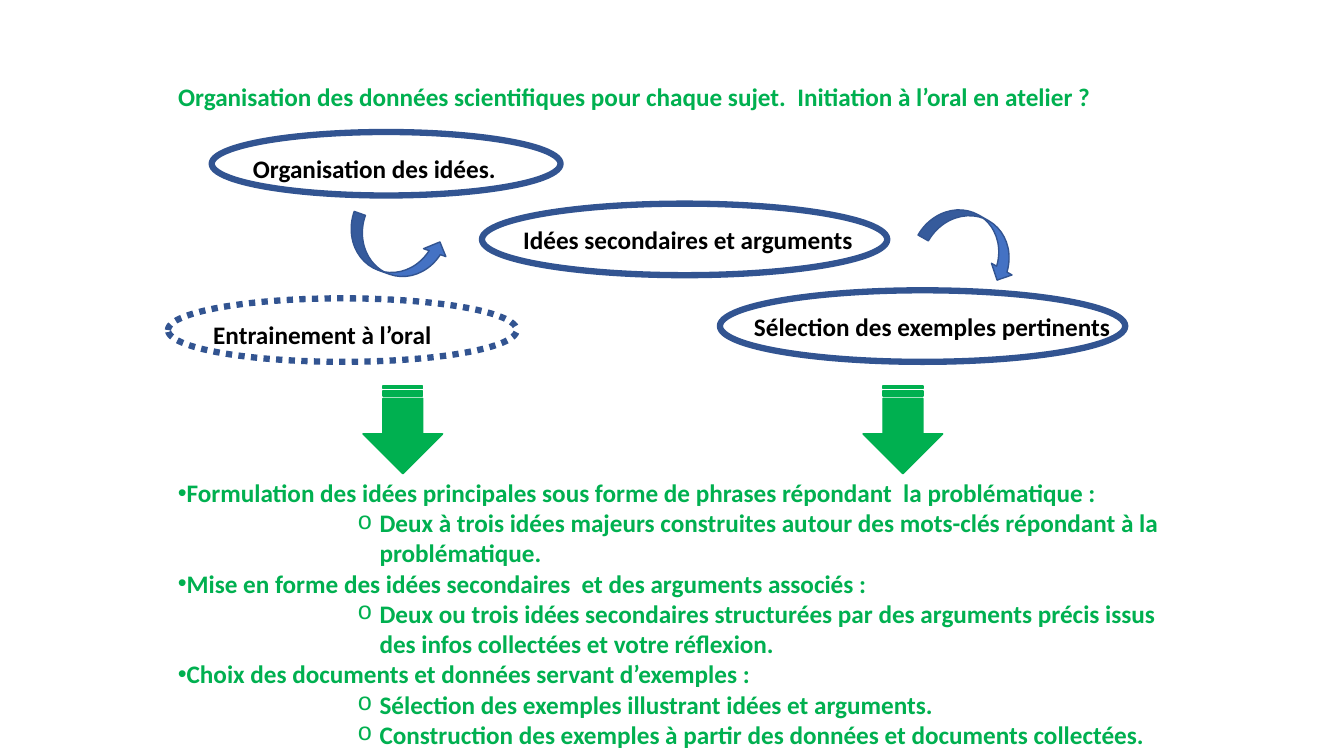
from dataclasses import dataclass

from lxml import etree
from pptx import Presentation
from pptx import util as u
from pptx.dml.color import RGBColor
from pptx.enum import dml, shapes, text
from pptx.oxml.ns import qn


@dataclass(frozen=True)
class Theme:
    font: str = "Calibri"
    size: int = 18
    green: RGBColor = RGBColor(0x00, 0xB0, 0x50)
    black: RGBColor = RGBColor(0x00, 0x00, 0x00)
    blue: RGBColor = RGBColor(0x44, 0x72, 0xC4)
    outline: RGBColor = RGBColor(0x32, 0x54, 0x91)
    ring_width: float = 4.5
    arrow_width: float = 1


THEME = Theme()
WIDTH, HEIGHT = 13.33, 7.5
LEFT = WIDTH / 8
LINE_HEIGHT = 0.4
SUB_INDENT, SUB_HANGING = 2.0, 0.22

TITLE = "Organisation des données scientifiques pour chaque sujet.  Initiation à l’oral en atelier ?"

# Ellipse box, label offset inside it, label width, label, dotted outline
IDEAS = [
    ((2.1, 1.31, 3.46, 0.63), 0.31, 3.54, "Organisation des idées.", False),
    ((4.78, 2.02, 4.02, 0.71), 0.31, 3.62, "Idées secondaires et arguments", False),
    ((7.14, 2.88, 4.02, 0.71), 0.24, 3.86, "Sélection des exemples pertinents", False),
    ((LEFT, 2.96, 3.46, 0.63), 0.35, 2.52, "Entrainement à l’oral", True),
]

STEPS = [
    ("Formulation des idées principales sous forme de phrases répondant  la problématique\u00a0:",
     ["Deux à trois idées majeurs construites autour des mots-clés répondant à la problématique."]),
    ("Mise en forme des idées secondaires  et des arguments associés\u00a0:",
     ["Deux ou trois idées secondaires structurées par des arguments précis issus "
      "des infos collectées et votre réflexion."]),
    ("Choix des documents et données servant d’exemples\u00a0:",
     ["Sélection des exemples illustrant idées et arguments.",
      "Construction des exemples à partir des données et documents collectées."]),
]


def inches(box):
    return [u.Inches(length) for length in box]


def format_paragraph(paragraph, color):
    paragraph.alignment = text.PP_ALIGN.LEFT
    font = paragraph.font
    font.name, font.size, font.bold = THEME.font, u.Pt(THEME.size), True
    font.color.rgb = color


def set_bullet(paragraph, character, font_name, margin=0, hanging=0):
    properties = paragraph._p.get_or_add_pPr()
    properties.set("marL", str(u.Inches(margin)))
    properties.set("indent", str(-u.Inches(hanging)))
    bullet_font = etree.Element(qn("a:buFont"), typeface=font_name)
    bullet = etree.Element(qn("a:buChar"), char=character)
    defaults = properties.find(qn("a:defRPr"))
    defaults.addprevious(bullet_font)
    defaults.addprevious(bullet)


def add_text_box(slide, box):
    frame = slide.shapes.add_textbox(*inches(box)).text_frame
    frame.word_wrap = True
    return frame


def add_preset(slide, kind, box, line_color, line_width, fill=None, rotation=0):
    shape = slide.shapes.add_shape(kind, *inches(box))
    shape.shadow.inherit = False
    shape.rotation = rotation
    if fill is None:
        shape.fill.background()
    else:
        shape.fill.solid()
        shape.fill.fore_color.rgb = fill
    shape.line.color.rgb = line_color
    shape.line.width = u.Pt(line_width)
    return shape


def place_title(slide, box):
    title = slide.shapes.title
    title.left, title.top, title.width, title.height = inches(box)
    frame = title.text_frame
    frame.text = TITLE
    frame.word_wrap = True
    frame.auto_size = text.MSO_AUTO_SIZE.NONE
    frame.vertical_anchor = text.MSO_ANCHOR.TOP
    format_paragraph(frame.paragraphs[0], THEME.green)


def add_idea(slide, box, label_offset, label_width, label, dotted):
    """Draw a ringed idea with its label hanging 0.16 inch below the ring's top."""
    left, top, _, _ = box
    ring = add_preset(slide, shapes.MSO_SHAPE.OVAL, box, THEME.outline, THEME.ring_width)
    if dotted:
        ring.line.dash_style = dml.MSO_LINE.ROUND_DOT
    frame = add_text_box(slide, (left + label_offset, top + 0.16, label_width, LINE_HEIGHT))
    frame.text = label
    format_paragraph(frame.paragraphs[0], THEME.black)


def add_arrows(slide):
    preset = shapes.MSO_SHAPE
    for kind, left, top, rotation in [
        (preset.CURVED_LEFT_ARROW, 9.43, 1.87, 299.7),
        (preset.CURVED_RIGHT_ARROW, 3.68, 1.98, 289.6),
    ]:
        add_preset(slide, kind, (left, top, 0.47, 1.02), THEME.outline,
                   THEME.arrow_width, THEME.blue, rotation)
    for left in (3.56, 8.52):
        add_preset(slide, preset.STRIPED_RIGHT_ARROW, (left, 3.87, 0.87, 0.79),
                   THEME.green, THEME.arrow_width, THEME.green, 90)


def add_steps(slide, box):
    frame = add_text_box(slide, box)
    frame.vertical_anchor = text.MSO_ANCHOR.MIDDLE
    lines = [line for step, details in STEPS
             for line in [(step, False)] + [(detail, True) for detail in details]]
    for number, (wording, is_detail) in enumerate(lines):
        paragraph = frame.add_paragraph() if number else frame.paragraphs[0]
        paragraph.text = wording
        format_paragraph(paragraph, THEME.green)
        if is_detail:
            paragraph.level = 4
            set_bullet(paragraph, "o", "Courier New", SUB_INDENT, SUB_HANGING)
        else:
            set_bullet(paragraph, "•", "Arial")


def main():
    presentation = Presentation()
    presentation.slide_width, presentation.slide_height = inches((WIDTH, HEIGHT))
    slide = presentation.slides.add_slide(presentation.slide_layouts.get_by_name("Title Only"))
    place_title(slide, (LEFT, 0.76, WIDTH * 0.7, LINE_HEIGHT))
    add_steps(slide, (LEFT, 4.67, WIDTH * 0.75, HEIGHT - 4.67))
    for idea in IDEAS:
        add_idea(slide, *idea)
    add_arrows(slide)
    presentation.save("out.pptx")


if __name__ == "__main__":
    main()
